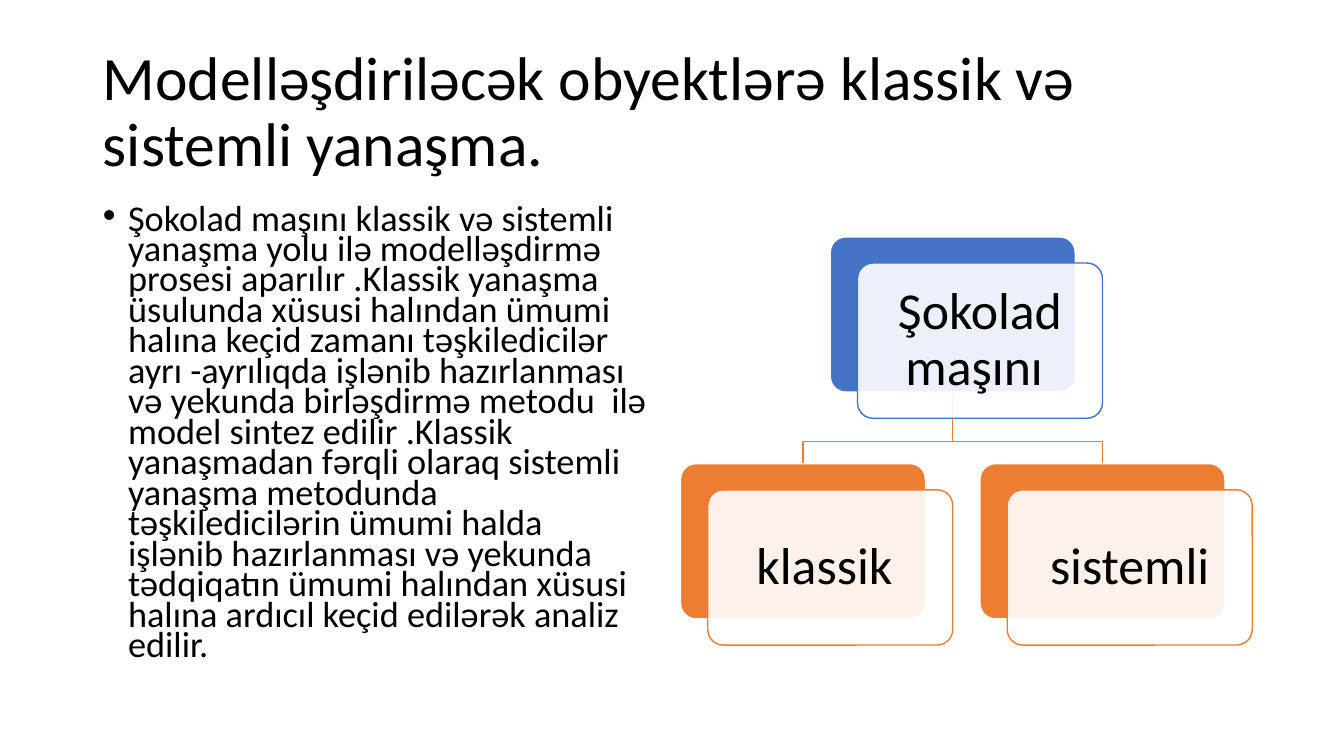
from lxml.etree import SubElement
from pptx import Presentation
from pptx.dml.color import RGBColor
from pptx.enum.shapes import MSO_SHAPE
from pptx.enum.text import MSO_ANCHOR, MSO_AUTO_SIZE, PP_ALIGN
from pptx.oxml.ns import qn
from pptx.util import Inches, Pt

BLACK = RGBColor(0x00, 0x00, 0x00)
WHITE = RGBColor(0xFF, 0xFF, 0xFF)
BLUE = RGBColor(0x44, 0x72, 0xC4)
ORANGE = RGBColor(0xED, 0x7D, 0x31)
FONT = "Calibri"

MARGIN = 0.92
TREE_LEFT, TREE_TOP = 6.75, 2.35
COLUMN, ROW = 1.485, 2.25
CARD_WIDTH, CARD_HEIGHT = 2.43, 1.54
SHIFT_X, SHIFT_Y = 0.27, 0.26
ELBOW_RISE = 0.22

TITLE = "Modelləşdiriləcək obyektlərə klassik və sistemli yanaşma."
BODY = (
    "Şokolad maşını klassik və sistemli yanaşma yolu ilə modelləşdirmə "
    "prosesi aparılır .Klassik yanaşma üsulunda xüsusi halından ümumi "
    "halına keçid zamanı təşkiledicilər ayrı -ayrılıqda işlənib "
    "hazırlanması  və yekunda birləşdirmə metodu  ilə model sintez edilir "
    ".Klassik yanaşmadan fərqli olaraq sistemli yanaşma metodunda "
    "təşkiledicilərin ümumi halda  işlənib hazırlanması və yekunda "
    "tədqiqatın ümumi halından xüsusi halına ardıcıl keçid edilərək "
    "analiz edilir."
)
ROOT = ("Şokolad maşını ", 1, 0, BLUE)
BRANCHES = [("klassik ", 0, 1, ORANGE), ("sistemli", 2, 1, ORANGE)]


def grid_point(column, row):
    """Return the left and top, in inches, of a tree cell."""
    return TREE_LEFT + column * COLUMN, TREE_TOP + row * ROW


def write_text(shape, text, size, anchor, alignment, line_spacing):
    """Write one formatted paragraph into a shape and return it."""
    frame = shape.text_frame
    frame.word_wrap = True
    frame.auto_size = MSO_AUTO_SIZE.NONE
    frame.vertical_anchor = anchor
    paragraph = frame.paragraphs[0]
    paragraph.alignment = alignment
    paragraph.line_spacing = line_spacing
    run = paragraph.add_run()
    run.text = text
    run.font.name = FONT
    run.font.size = Pt(size)
    run.font.color.rgb = BLACK
    return paragraph


def place(shape, left, top, width, height):
    """Move and size a placeholder, in inches."""
    shape.left, shape.top = Inches(left), Inches(top)
    shape.width, shape.height = Inches(width), Inches(height)


def add_bullet(paragraph):
    """Give a paragraph a round bullet with a hanging indent."""
    properties = paragraph._p.get_or_add_pPr()
    properties.set("marL", str(Inches(0.25)))
    properties.set("indent", str(-Inches(0.25)))
    SubElement(properties, qn("a:buFont"), typeface="Arial")
    SubElement(properties, qn("a:buChar"), char="•")


def add_rounded(slide, left, top, fill, line):
    """Add one rounded rectangle of card size."""
    shape = slide.shapes.add_shape(
        MSO_SHAPE.ROUNDED_RECTANGLE, Inches(left), Inches(top),
        Inches(CARD_WIDTH), Inches(CARD_HEIGHT))
    shape.adjustments[0] = 0.1
    shape.shadow.inherit = False
    shape.fill.solid()
    shape.fill.fore_color.rgb = fill
    shape.line.color.rgb = line
    shape.line.width = Pt(1)
    return shape


def add_card(slide, text, column, row, color):
    """Add a coloured card with a translucent labelled card over it."""
    left, top = grid_point(column, row)
    add_rounded(slide, left, top, color, WHITE)
    front = add_rounded(slide, left + SHIFT_X, top + SHIFT_Y, WHITE, color)
    fill_color = front.fill._xPr.find(qn("a:solidFill"))[0]
    SubElement(fill_color, qn("a:alpha"), val="90000")
    frame = front.text_frame
    frame.margin_left = frame.margin_right = Inches(0.2)
    frame.margin_top = frame.margin_bottom = Inches(0.2)
    write_text(front, text, 37, MSO_ANCHOR.MIDDLE, PP_ALIGN.CENTER, 0.9)


def add_branch_line(slide, parent, child):
    """Draw the bent line from a parent card down to a child card."""
    parent_left, parent_top = grid_point(*parent)
    child_left, child_top = grid_point(*child)
    start_x = parent_left + CARD_WIDTH / 2
    end_x = child_left + CARD_WIDTH / 2
    bend = child_top - ELBOW_RISE
    points = [(start_x, parent_top + CARD_HEIGHT), (start_x, bend),
              (end_x, bend), (end_x, child_top)]
    start, *rest = [(Inches(x), Inches(y)) for x, y in points]
    builder = slide.shapes.build_freeform(*start)
    builder.add_line_segments(rest, close=False)
    line = builder.convert_to_shape()
    line.shadow.inherit = False
    line.fill.background()
    line.line.color.rgb = ORANGE
    line.line.width = Pt(1)


def main():
    """Build the slide and save it."""
    presentation = Presentation()
    presentation.slide_width = Inches(13.33)
    presentation.slide_height = Inches(7.5)
    slide = presentation.slides.add_slide(presentation.slide_layouts[1])

    title, body = slide.placeholders
    place(title, MARGIN, 0.4, 11.5, 1.45)
    write_text(title, TITLE, 44, MSO_ANCHOR.MIDDLE, PP_ALIGN.LEFT, 0.9)
    place(body, MARGIN, 2, 5.67, 4.76)
    paragraph = write_text(body, BODY, 25.9, MSO_ANCHOR.TOP, PP_ALIGN.LEFT, 0.7)
    paragraph.space_before = Pt(10)
    add_bullet(paragraph)

    for branch in reversed(BRANCHES):
        add_branch_line(slide, ROOT[1:3], branch[1:3])
    for card in [ROOT, *BRANCHES]:
        add_card(slide, *card)
    presentation.save("out.pptx")


if __name__ == "__main__":
    main()
